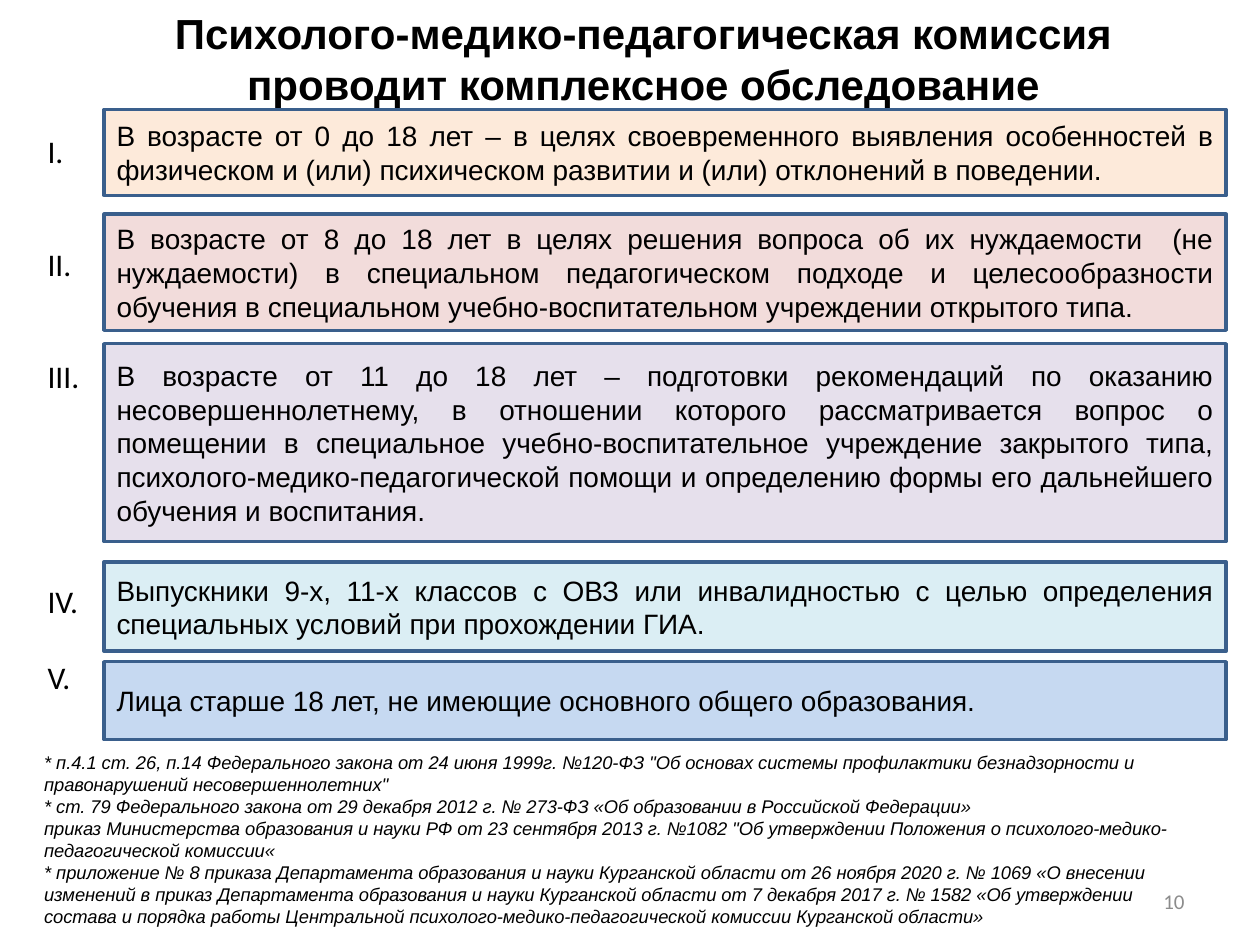
from pptx import Presentation
from pptx import util as u
from pptx.dml.color import RGBColor
from pptx.enum import shapes, text

TITLE = ["Психолого-медико-педагогическая комиссия",
         "проводит комплексное обследование"]

# top, height (cm), fill, wording
CASES = [
    (2.21, 1.73, "FDEADA",
     "В возрасте от 0 до 18 лет – в целях своевременного выявления особенностей "
     "в физическом и (или) психическом развитии и (или) отклонений в поведении."),
    (4.32, 2.34, "F2DCDB",
     "В возрасте от 8 до 18 лет в целях решения вопроса об их нуждаемости  (не "
     "нуждаемости) в специальном педагогическом подходе и целесообразности обучения "
     "в специальном учебно-воспитательном учреждении открытого типа."),
    (6.93, 3.99, "E6E0EC",
     "В возрасте от 11 до 18 лет – подготовки рекомендаций по оказанию "
     "несовершеннолетнему, в отношении которого рассматривается вопрос о помещении "
     "в специальное учебно-воспитательное учреждение закрытого типа, "
     "психолого-медико-педагогической помощи и определению формы его дальнейшего "
     "обучения и воспитания."),
    (11.33, 1.8, "DBEEF4",
     "Выпускники 9-х, 11-х классов с ОВЗ или инвалидностью с целью определения "
     "специальных условий при прохождении ГИА."),
    (13.34, 1.57, "C6D9F1",
     "Лица старше 18 лет, не имеющие основного общего образования."),
]

# numeral, space before (points)
NUMERALS = [("I.", 0), ("II.", 42.6), ("III.", 42.6), ("IV.", 107.2), ("V.", 21.4)]

SOURCES = [
    "* п.4.1 ст. 26, п.14 Федерального закона от 24 июня 1999г. №120-ФЗ \"Об основах "
    "системы профилактики безнадзорности и правонарушений несовершеннолетних\"",
    "* ст. 79 Федерального закона от 29 декабря 2012 г. № 273-ФЗ «Об образовании "
    "в Российской Федерации»",
    "приказ Министерства образования и науки РФ от 23 сентября 2013 г. №1082 "
    "\"Об утверждении Положения о психолого-медико-педагогической комиссии«",
    "* приложение № 8 приказа Департамента образования и науки Курганской области "
    "от 26 ноября 2020 г. № 1069 «О внесении изменений в приказ Департамента "
    "образования и науки Курганской области от 7 декабря 2017 г. № 1582 "
    "«Об утверждении состава и порядка работы Центральной "
    "психолого-медико-педагогической комиссии Курганской области»",
]


def colour(value):
    return RGBColor.from_string(value)


def write(box, lines, size, name="Arial", ink="000000", align="LEFT",
          anchor="TOP", gaps=None, **style):
    """Fill a box with one paragraph per line."""
    frame = box.text_frame
    frame.word_wrap = True
    frame.vertical_anchor = getattr(text.MSO_ANCHOR, anchor)
    style.update(name=name, size=u.Pt(size))
    for index, line in enumerate(lines):
        para = frame.add_paragraph() if index else frame.paragraphs[0]
        para.alignment = getattr(text.PP_ALIGN, align)
        if gaps:
            para.space_before = u.Pt(gaps[index])
        span = para.add_run()
        span.text = line
        for key, value in style.items():
            setattr(span.font, key, value)
        span.font.color.rgb = colour(ink)


def add_text(page, area, lines, size, **style):
    box = page.shapes.add_textbox(*map(u.Cm, area))
    write(box, lines, size, **style)


def add_case(page, area, fill, wording):
    box = page.shapes.add_shape(shapes.MSO_SHAPE.RECTANGLE, *map(u.Cm, area))
    box.shadow.inherit = False
    box.fill.solid()
    box.fill.fore_color.rgb = colour(fill)
    box.line.color.rgb = colour("3A5F8C")
    box.line.width = u.Pt(2)
    write(box, [wording], 16, align="JUSTIFY", anchor="MIDDLE")


def add_cases(page, left, width):
    for top, height, fill, wording in CASES:
        add_case(page, (left, top, width, height), fill, wording)


def add_numerals(page, area):
    labels, gaps = zip(*NUMERALS)
    add_text(page, area, labels, 18, name="Calibri", gaps=gaps)


def main():
    deck = Presentation()
    deck.slide_width, deck.slide_height = u.Cm(25.4), u.Cm(19.05)
    page = deck.slides.add_slide(deck.slide_layouts[6])

    # Title
    add_text(page, (0.84, 0.03, 24.26, 2.31), TITLE, 24, align="CENTER", bold=True)
    # Numbered cases
    add_cases(page, 2.1, 22.62)
    add_numerals(page, (0.71, 2.54, 1.37, 11.79))
    # Legal sources
    add_text(page, (0.64, 15.01, 24, 3.84), SOURCES, 10.5, italic=True)
    # Page number
    add_text(page, (18.21, 17.65, 5.92, 1.02), ["10"], 12, name="Calibri",
             ink="8C8C8C", align="RIGHT", anchor="MIDDLE")

    deck.save("out.pptx")


if __name__ == "__main__":
    main()
